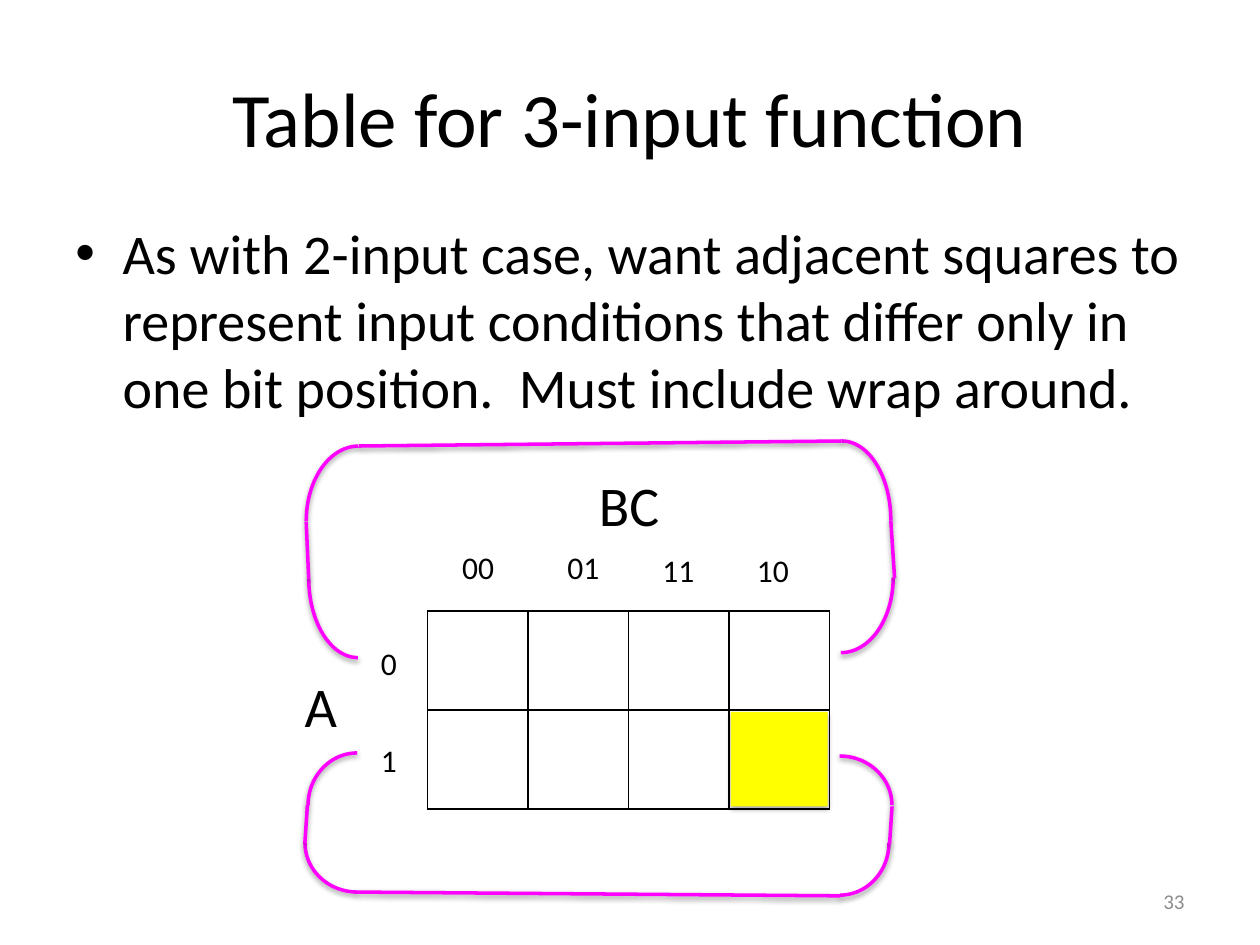
import pptx
import pptx.dml.color
import pptx.enum.shapes
import pptx.enum.text
import pptx.oxml
import pptx.oxml.ns
import pptx.util

BLACK = pptx.dml.color.RGBColor(0, 0, 0)
GRAY = pptx.dml.color.RGBColor(0x8C, 0x8C, 0x8C)
MAGENTA = pptx.dml.color.RGBColor(0xFF, 0, 0xFF)
YELLOW = pptx.dml.color.RGBColor(0xFF, 0xFF, 0)

WIDTH = pptx.util.Inches(10)
HEIGHT = pptx.util.Inches(7.5)
COLUMN = WIDTH / 100
ROW = HEIGHT / 75

ALIGN = pptx.enum.text.PP_ALIGN
ANCHOR = pptx.enum.text.MSO_ANCHOR
FIT = pptx.enum.text.MSO_AUTO_SIZE
SHAPE = pptx.enum.shapes.MSO_SHAPE
NAMESPACE = pptx.oxml.ns.nsdecls("a")

UPPER_ARCS = [(-2.2, 7, 12.6, 7.8, 90), (0, 0.4, 8.3, 11.9, 180),
              (36.2, 2.4, 12.6, 7.8, 270), (38.3, 4.9, 8.3, 11.9, 0)]
UPPER_LINES = [(0.2, 10.9, 0, 6.4), (46.4, 6.3, 46.7, 10.9), (42.5, 0, 4.2, 0.4)]
LOWER_ARCS = [(0, 0, 8.3, 7.8, 270), (0, 3, 8.3, 7.8, 180),
              (38.3, 3, 8.3, 7.8, 90), (38.3, 0, 8.3, 7.8, 0)]
LOWER_LINES = [(0.2, 3.9, 0, 6.9), (46.4, 7, 46.6, 4), (42.5, 11.1, 4.1, 10.8)]


def set_format(target, values):
    for name, value in values.items():
        setattr(target, name, value)


def on_grid(left, top, width, height):
    return (round(left * COLUMN), round(top * ROW),
            round(width * COLUMN), round(height * ROW))


def add_xml(parent, xml):
    parent.append(pptx.oxml.parse_xml(xml))


def add_shadow(shape, opacity, distance):
    add_xml(shape._element.spPr,
            f'<a:effectLst {NAMESPACE}><a:outerShdw blurRad="{pptx.util.Pt(3.1)}" '
            f'dist="{pptx.util.Pt(distance)}" dir="5400000" rotWithShape="0">'
            f'<a:srgbClr val="{BLACK}"><a:alpha val="{opacity * 1000}"/></a:srgbClr>'
            '</a:outerShdw></a:effectLst>')


def add_text(page, box, words, size, color=BLACK, align=ALIGN.LEFT, **frame_format):
    frame = page.shapes.add_textbox(*on_grid(*box)).text_frame
    set_format(frame, {"word_wrap": True, **frame_format})
    para = frame.paragraphs[0]
    para.alignment = align
    span = para.add_run()
    span.text = words
    set_format(span.font, {"name": "Calibri", "size": pptx.util.Pt(size)})
    span.font.color.rgb = color
    return para


def add_body(page, box, words):
    properties = add_text(page, box, words, 32)._p.get_or_add_pPr()
    indent = round(3.75 * COLUMN)
    properties.set("marL", str(indent))
    properties.set("indent", str(-indent))
    add_xml(properties, f'<a:spcBef {NAMESPACE}><a:spcPct val="20000"/></a:spcBef>')
    add_xml(properties, f'<a:buFont {NAMESPACE} typeface="Arial"/>')
    add_xml(properties, f'<a:buChar {NAMESPACE} char="•"/>')


def add_label(page, box, words, size=18):
    add_text(page, box, words, size, word_wrap=False, auto_size=FIT.SHAPE_TO_FIT_TEXT)


def add_map(page, box):
    left, top, width, height = box
    table = page.shapes.add_table(2, 4, *on_grid(*box)).table
    set_format(table, {"first_row": False, "horz_banding": False})
    for cell in table.iter_cells():
        properties = cell._tc.get_or_add_tcPr()
        for side in ("lnL", "lnR", "lnT", "lnB"):
            add_xml(properties,
                    f'<a:{side} {NAMESPACE} w="{pptx.util.Pt(1)}"><a:solidFill>'
                    f'<a:srgbClr val="{BLACK}"/></a:solidFill></a:{side}>')
        cell.fill.background()

    add_label(page, (left - 10.75, top + 4.3, 4.6, 6.4), "A", 32)
    for row, bit in enumerate("01"):
        add_label(page, (left - 4.7, top + 2.1 + row * 7.7, 3.3, 4), bit)
    add_label(page, (left + 12.6, top - 11.65, 6.9, 6.4), "BC", 32)
    headings = [("00", 1.75, 5.5), ("01", 10.1, 5.5), ("11", 17.65, 5.25), ("10", 25.15, 5.25)]
    for bits, across, above in headings:
        add_label(page, (left + across, top - above, 4.6, 4), bits)


def add_loop(page, box, arcs, lines, flipped=False):
    left, top = box[:2]
    shapes = page.shapes.add_group_shape().shapes
    strokes = []
    for across, down, width, height, turn in arcs:
        arc = shapes.add_shape(SHAPE.ARC, *on_grid(left + across, top + down, width, height))
        arc.rotation = turn
        arc.fill.background()
        if flipped:
            arc._element.spPr.xfrm.set("flipV", "1")
        strokes.append(arc)
    for start_x, start_y, end_x, end_y in lines:
        ends = on_grid(left + start_x, top + start_y, left + end_x, top + end_y)
        strokes.append(shapes.add_connector(pptx.enum.shapes.MSO_CONNECTOR.STRAIGHT, *ends))
    for stroke in strokes:
        stroke.line.color.rgb = MAGENTA
        stroke.line.width = pptx.util.Pt(2)
        add_shadow(stroke, 38, 1.6)


def add_highlight(page, box):
    square = page.shapes.add_shape(SHAPE.RECTANGLE, *on_grid(*box))
    square.fill.solid()
    square.fill.fore_color.rgb = YELLOW
    square.line.fill.background()
    add_shadow(square, 35, 1.8)


def main():
    deck = pptx.Presentation()
    set_format(deck, {"slide_width": WIDTH, "slide_height": HEIGHT})
    page = deck.slides.add_slide(deck.slide_layouts[6])
    add_text(page, (5, 3, 90, 12.5), "Table for 3-input function", 44,
             align=ALIGN.CENTER, vertical_anchor=ANCHOR.MIDDLE)
    add_body(page, (5, 16.85, 90, 50.1),
             "As with 2-input case, want adjacent squares to represent input "
             "conditions that differ only in one bit position.  Must include wrap around.")
    add_text(page, (71.7, 69.5, 23.3, 4), "33", 12, GRAY,
             align=ALIGN.RIGHT, vertical_anchor=ANCHOR.MIDDLE)
    add_map(page, (33.95, 48.5, 31.9, 15.7))
    add_loop(page, (24.2, 60, 46.6, 11.1), LOWER_ARCS, LOWER_LINES)
    add_loop(page, (24.3, 35, 46.7, 17.2), UPPER_ARCS, UPPER_LINES, flipped=True)
    add_highlight(page, (58, 56.5, 7.7, 7.5))
    deck.save("out.pptx")


if __name__ == "__main__":
    main()
